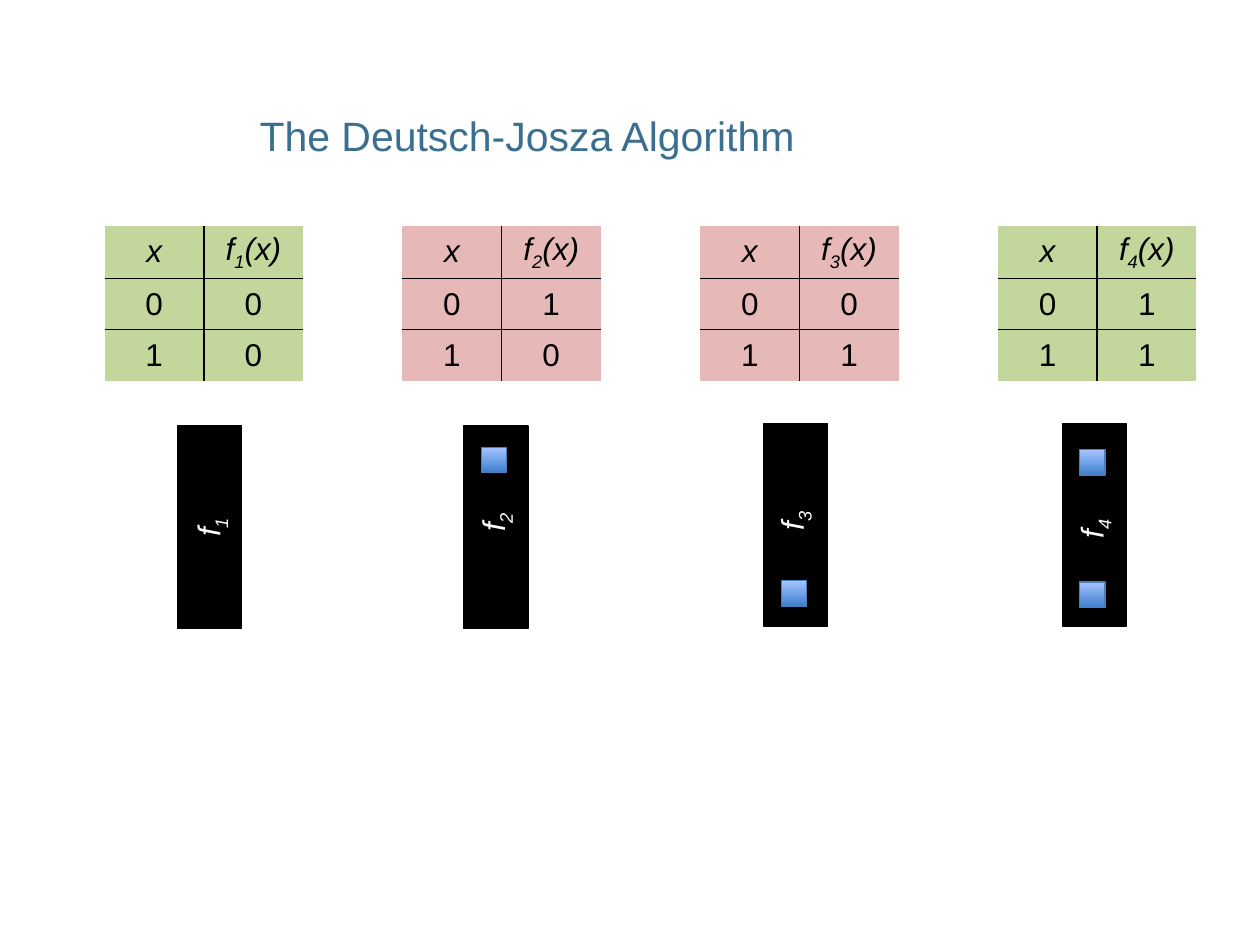
from dataclasses import dataclass

from lxml.etree import SubElement
from pptx import Presentation
from pptx.dml.color import RGBColor
from pptx.enum.shapes import MSO_SHAPE
from pptx.enum.text import MSO_ANCHOR, MSO_AUTO_SIZE, PP_ALIGN
from pptx.oxml.ns import qn
from pptx.shapes.autoshape import Shape
from pptx.slide import Slide
from pptx.table import Table, _Cell as Cell
from pptx.text.text import _Paragraph as Paragraph
from pptx.util import Inches, Pt

BLACK = RGBColor(0x00, 0x00, 0x00)
WHITE = RGBColor(0xFF, 0xFF, 0xFF)
TITLE_BLUE = RGBColor(0x3A, 0x6F, 0x8F)
GREEN = RGBColor(0xC3, 0xD6, 0x9B)
PINK = RGBColor(0xE6, 0xB9, 0xB8)
GATE_DARK = RGBColor(0x3F, 0x80, 0xCE)
GATE_LIGHT = RGBColor(0xA4, 0xC4, 0xFF)
GATE_EDGE = RGBColor(0x4B, 0x7E, 0xBC)

FONT = "Arial"
COLUMN_WIDTH = 8.67 / 11
ROW_HEIGHT = 1.22 / 3
BOX_WIDTH, BOX_HEIGHT = 0.51, 1.61
GATE_SIZE = 0.2


@dataclass(frozen=True)
class Oracle:
    index: str
    outputs: tuple[str, str]
    color: RGBColor
    box_left: float
    box_top: float
    label_left: float
    label_top: float
    gate_tops: tuple[float, ...] = ()


ORACLES = (
    Oracle("1", ("0", "0"), GREEN, 1.41, 3.38, 1.44, 3.95),
    Oracle("2", ("1", "0"), PINK, 3.68, 3.38, 3.70, 3.91, (3.55,)),
    Oracle("3", ("0", "1"), PINK, 6.06, 3.36, 6.07, 3.90, (4.61,)),
    Oracle("4", ("1", "1"), GREEN, 8.43, 3.36, 8.45, 3.96, (3.57, 4.62)),
)


def style_text(paragraph: Paragraph, color: RGBColor, italic: bool) -> None:
    font = paragraph.font
    font.name, font.size, font.italic = FONT, Pt(18), italic
    font.color.rgb = color


def add_function_name(paragraph: Paragraph, index: str, argument: str = "") -> None:
    paragraph.add_run().text = "f"
    subscript = paragraph.add_run()
    subscript.text = index
    subscript._r.get_or_add_rPr().set("baseline", "-25000")
    if argument:
        paragraph.add_run().text = argument


def add_borders(cell: Cell, sides: str) -> None:
    properties = cell._tc.get_or_add_tcPr()
    for side in "LRTB":
        line = SubElement(properties, qn(f"a:ln{side}"), w=str(Pt(1)))
        if side in sides:
            fill = SubElement(line, qn("a:solidFill"))
            SubElement(fill, qn("a:srgbClr"), val=str(BLACK))
        else:
            SubElement(line, qn("a:noFill"))


def fill_truth_table(table: Table, first_column: int, oracle: Oracle) -> None:
    columns = (("x", "0", "1"), ("", *oracle.outputs))
    for offset, values in enumerate(columns):
        for row, value in enumerate(values):
            cell = table.cell(row, first_column + offset)
            add_borders(cell, "RL"[offset] + ("B", "TB", "T")[row])
            cell.fill.solid()
            cell.fill.fore_color.rgb = oracle.color
            cell.vertical_anchor = MSO_ANCHOR.MIDDLE
            paragraph = cell.text_frame.paragraphs[0]
            paragraph.alignment = PP_ALIGN.CENTER
            style_text(paragraph, BLACK, italic=row == 0)
            if value:
                paragraph.add_run().text = value
            else:
                add_function_name(paragraph, oracle.index, "(x)")


def add_truth_tables(slide: Slide) -> None:
    frame = slide.shapes.add_table(
        3, 11, Inches(0.83), Inches(1.79), Inches(8.67), Inches(1.22)
    )
    table = frame.table
    table.first_row = table.horz_banding = False
    for column in table.columns:
        column.width = Inches(COLUMN_WIDTH)
    for row in table.rows:
        row.height = Inches(ROW_HEIGHT)
    for position, oracle in enumerate(ORACLES):
        fill_truth_table(table, 3 * position, oracle)
    for spacer in (2, 5, 8):
        for row in range(3):
            cell = table.cell(row, spacer)
            add_borders(cell, "")
            cell.fill.background()


def add_rectangle(
    shapes, left: float, top: float, width: float, height: float, edge: RGBColor
) -> Shape:
    shape = shapes.add_shape(
        MSO_SHAPE.RECTANGLE, Inches(left), Inches(top), Inches(width), Inches(height)
    )
    shape.shadow.inherit = False
    shape.line.color.rgb = edge
    shape.line.width = Pt(0.75)
    return shape


def add_gate(shapes, left: float, top: float) -> None:
    gate = add_rectangle(shapes, left, top, GATE_SIZE, GATE_SIZE, GATE_EDGE)
    gate.fill.gradient()
    gate.fill.gradient_angle = 90
    for stop, color in zip(gate.fill.gradient_stops, (GATE_DARK, GATE_LIGHT)):
        stop.color.rgb = color


def add_oracle_box(slide: Slide, oracle: Oracle) -> None:
    shapes = slide.shapes
    if oracle.gate_tops:
        shapes = shapes.add_group_shape().shapes
    box = add_rectangle(
        shapes, oracle.box_left, oracle.box_top, BOX_WIDTH, BOX_HEIGHT, BLACK
    )
    box.fill.solid()
    box.fill.fore_color.rgb = BLACK
    for gate_top in oracle.gate_tops:
        add_gate(shapes, oracle.box_left + 0.14, gate_top)
    label = shapes.add_textbox(
        Inches(oracle.label_left), Inches(oracle.label_top), Inches(0.42), Inches(0.4)
    )
    label.rotation = 270
    label.text_frame.word_wrap = False
    label.text_frame.auto_size = MSO_AUTO_SIZE.SHAPE_TO_FIT_TEXT
    paragraph = label.text_frame.paragraphs[0]
    style_text(paragraph, WHITE, italic=True)
    add_function_name(paragraph, oracle.index)


def add_title(slide: Slide) -> None:
    title = slide.shapes.title
    title.left, title.top = Inches(1.96), Inches(0.89)
    title.width, title.height = Inches(7.54), Inches(0.42)
    title.text_frame.text = "The Deutsch-Josza Algorithm"
    title.text_frame.vertical_anchor = MSO_ANCHOR.MIDDLE
    title.text_frame.auto_size = MSO_AUTO_SIZE.NONE
    paragraph = title.text_frame.paragraphs[0]
    paragraph.alignment = PP_ALIGN.LEFT
    paragraph.line_spacing = Pt(24)
    paragraph.font.name, paragraph.font.size = FONT, Pt(23.4)
    paragraph.font.color.rgb = TITLE_BLUE


def main() -> None:
    presentation = Presentation()
    presentation.slide_width, presentation.slide_height = Inches(10), Inches(7.5)
    slide = presentation.slides.add_slide(presentation.slide_layouts[5])
    add_title(slide)
    add_truth_tables(slide)
    for oracle in ORACLES:
        add_oracle_box(slide, oracle)
    presentation.save("out.pptx")


if __name__ == "__main__":
    main()
